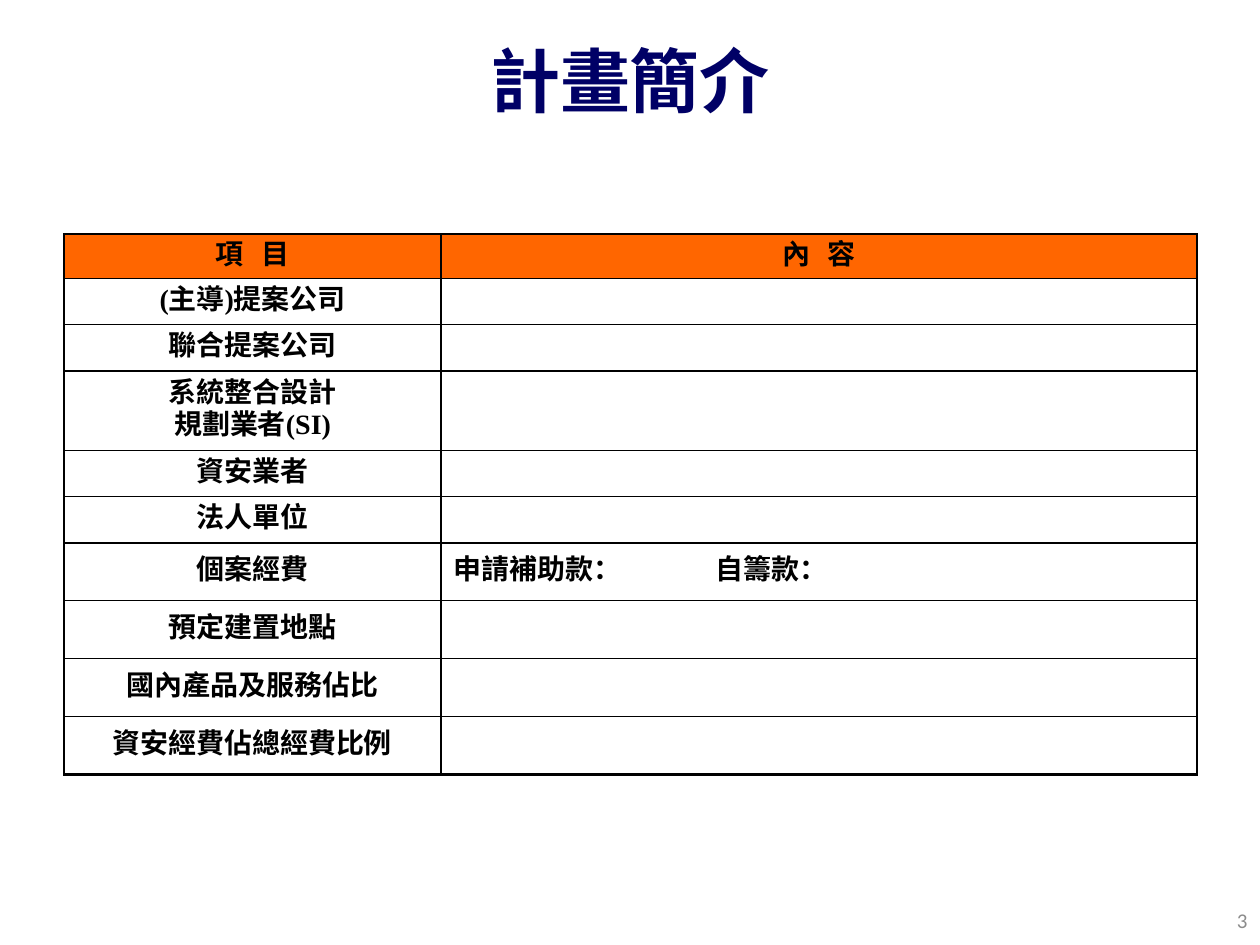
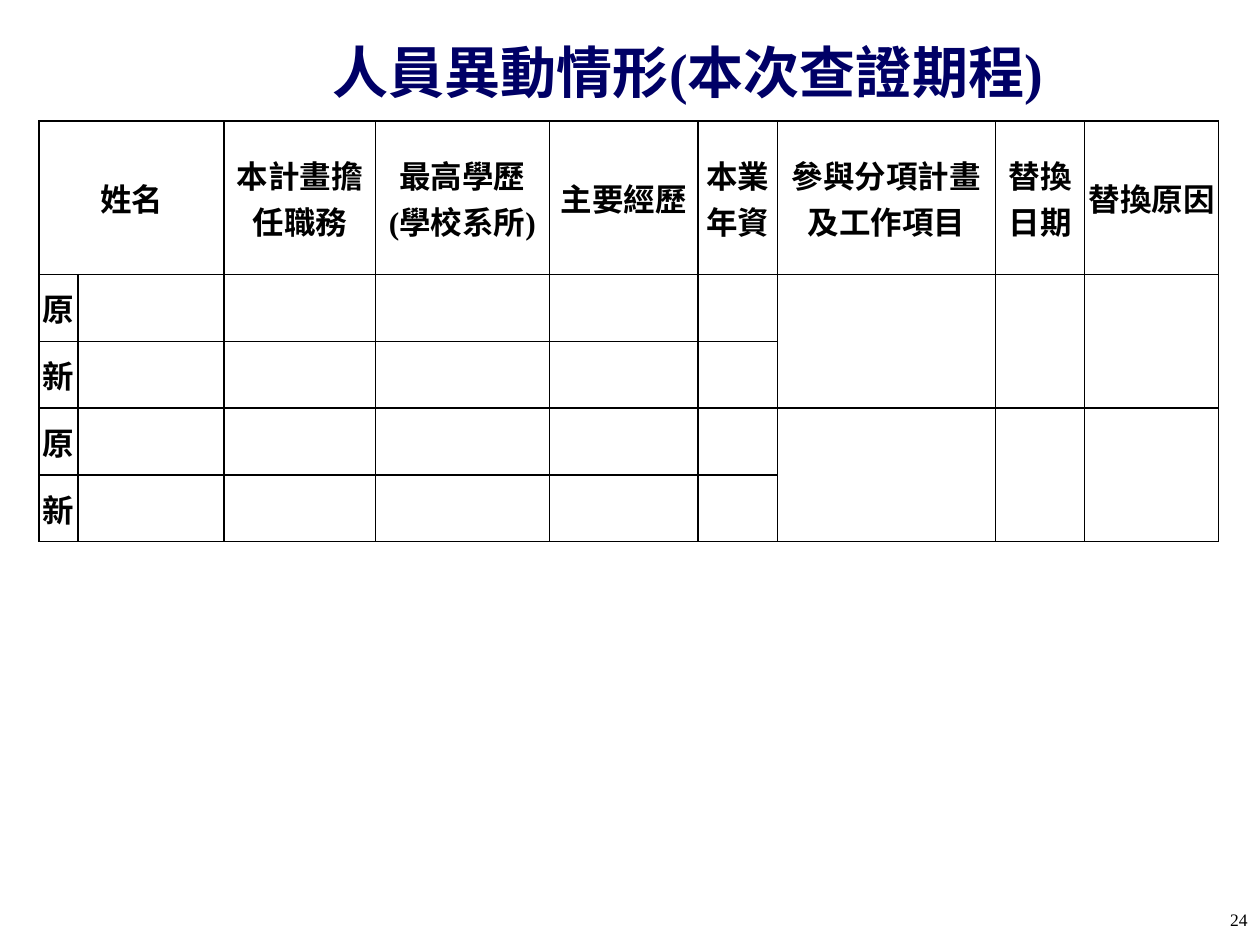
"""Build the project overview and staff change slides."""
from lxml.etree import SubElement
from pptx import Presentation
from pptx.dml.color import RGBColor
from pptx.enum.text import MSO_ANCHOR, PP_ALIGN
from pptx.oxml.ns import qn
from pptx.util import Inches, Pt

COLORS = {"title": "000066", "header": "FF6600", "white": "FFFFFF",
          "black": "000000", "number": "8C8C8C"}
FONT = "Times New Roman"

OVERVIEW_HEADINGS = ["項目", "內容"]
OVERVIEW_ROWS = [
    ("(主導)提案公司", "", 0.35),
    ("聯合提案公司", "", 0.35),
    ("系統整合設計\n規劃業者(SI)", "", 0.63),
    ("資安業者", "", 0.35),
    ("法人單位", "", 0.35),
    ("個案經費", "申請補助款：\t自籌款：", 0.46),
    ("預定建置地點", "", 0.46),
    ("國內產品及服務佔比", "", 0.46),
    ("資安經費佔總經費比例", "", 0.46),
]
OVERVIEW_WIDTHS = [2.99, 6]
HEADING_HEIGHT = 0.35

STAFF_COLUMNS = [
    ("姓名", 0.31), ("", 1.16), ("本計畫擔任職務", 1.2), ("最高學歷\n(學校系所)", 1.38),
    ("主要經歷", 1.18), ("本業年資", 0.63), ("參與分項計畫及工作項目", 1.73),
    ("替換日期", 0.71), ("替換原因", 1.06),
]
STAFF_LABELS = ["原", "新"] * 2
STAFF_HEIGHTS = [1.22] + [0.53] * len(STAFF_LABELS)
SHARED_COLUMNS = range(6, 9)


def color(name):
    return RGBColor.from_string(COLORS[name])


def style_paragraph(paragraph, size, color_name, bold=True, alignment=PP_ALIGN.CENTER, font=FONT):
    paragraph.alignment = alignment
    paragraph.font.name = font
    paragraph.font.size = Pt(size)
    paragraph.font.bold = bold
    paragraph.font.color.rgb = color(color_name)


def add_slide(presentation, title, title_box, title_size, number, number_style):
    slide = presentation.slides.add_slide(presentation.slide_layouts[5])
    shape = slide.shapes.title
    shape.left, shape.top, shape.width, shape.height = map(Inches, title_box)
    shape.text_frame.text = title
    shape.text_frame.vertical_anchor = MSO_ANCHOR.MIDDLE
    style_paragraph(shape.text_frame.paragraphs[0], title_size, "title")

    number_box = slide.shapes.add_textbox(Inches(7.67), Inches(7.1), Inches(2.33), Inches(0.4))
    frame = number_box.text_frame
    frame.word_wrap = True
    frame.vertical_anchor = MSO_ANCHOR.MIDDLE
    frame.text = number
    style_paragraph(frame.paragraphs[0], bold=False, alignment=PP_ALIGN.RIGHT, **number_style)
    return slide


def add_table(slide, left, top, widths, heights):
    table = slide.shapes.add_table(len(heights), len(widths), Inches(left), Inches(top),
                                   Inches(sum(widths)), Inches(sum(heights))).table
    table.first_row = table.horz_banding = False
    for column, width in zip(table.columns, widths):
        column.width = Inches(width)
    for row, height in zip(table.rows, heights):
        row.height = Inches(height)
    return table


def format_cell(cell, border_widths, fill="white"):
    properties = cell._tc.get_or_add_tcPr()
    for side, width in zip("LRTB", border_widths):
        line = SubElement(properties, qn(f"a:ln{side}"), w=str(Pt(width)))
        SubElement(SubElement(line, qn("a:solidFill")), qn("a:srgbClr"), val=COLORS["black"])
    cell.fill.solid()
    cell.fill.fore_color.rgb = color(fill)


def add_tab_stop(paragraph, position):
    tabs = SubElement(paragraph._p.get_or_add_pPr(), qn("a:tabLst"))
    SubElement(tabs, qn("a:tab"), pos=str(Inches(position)), algn="l")


def write_spaced_heading(cell, heading):
    paragraph = cell.text_frame.paragraphs[0]
    for character, spacing in zip(heading, ("1000", "0")):
        run = paragraph.add_run()
        run.text = character
        run._r.get_or_add_rPr().set("spc", spacing)


def build_overview(presentation):
    slide = add_slide(presentation, "計畫簡介", (0.5, 0.13, 9, 1.01), 40,
                      "3", {"size": 12, "color_name": "number", "font": "Calibri"})
    heights = [HEADING_HEIGHT] + [row[2] for row in OVERVIEW_ROWS]
    table = add_table(slide, 0.51, 1.86, OVERVIEW_WIDTHS, heights)
    last = len(heights) - 1
    for row in range(len(heights)):
        for column in range(2):
            cell = table.cell(row, column)
            edges = (column == 0, column == 1, row == 0, row == last)
            format_cell(cell, [1.5 if edge else 1 for edge in edges],
                        "white" if row else "header")
            if row:
                cell.text_frame.text = OVERVIEW_ROWS[row - 1][column]
                cell.vertical_anchor = MSO_ANCHOR.MIDDLE
            else:
                write_spaced_heading(cell, OVERVIEW_HEADINGS[column])
            is_content = row > 0 and column == 1
            for paragraph in cell.text_frame.paragraphs:
                if "\t" in paragraph.text:
                    add_tab_stop(paragraph, 2.08)
                style_paragraph(paragraph, 16, "black",
                                alignment=PP_ALIGN.LEFT if is_content else PP_ALIGN.CENTER)
                paragraph.line_spacing = Pt(18)


def build_staff_changes(presentation):
    slide = add_slide(presentation, "人員異動情形(本次查證期程)", (0.96, 0.17, 9, 0.79), 32,
                      "24", {"size": 10, "color_name": "black"})
    headings, widths = zip(*STAFF_COLUMNS)
    table = add_table(slide, 0.31, 0.96, widths, STAFF_HEIGHTS)
    blanks = [""] * (len(widths) - 1)
    rows = [headings] + [[label, *blanks] for label in STAFF_LABELS]
    for row, texts in enumerate(rows):
        for column, text in enumerate(texts):
            cell = table.cell(row, column)
            format_cell(cell, [1] * 4)
            cell.margin_left = cell.margin_right = Inches(0.02)
            cell.margin_top = cell.margin_bottom = 0
            cell.vertical_anchor = MSO_ANCHOR.MIDDLE
            cell.text_frame.text = text
            for paragraph in cell.text_frame.paragraphs:
                style_paragraph(paragraph, 18, "black")
    table.cell(0, 0).merge(table.cell(0, 1))
    for row in range(1, len(rows), 2):
        for column in SHARED_COLUMNS:
            table.cell(row, column).merge(table.cell(row + 1, column))


def main():
    presentation = Presentation()
    presentation.slide_width = Inches(10)
    presentation.slide_height = Inches(7.5)
    build_overview(presentation)
    build_staff_changes(presentation)
    presentation.save("out.pptx")


if __name__ == "__main__":
    main()
